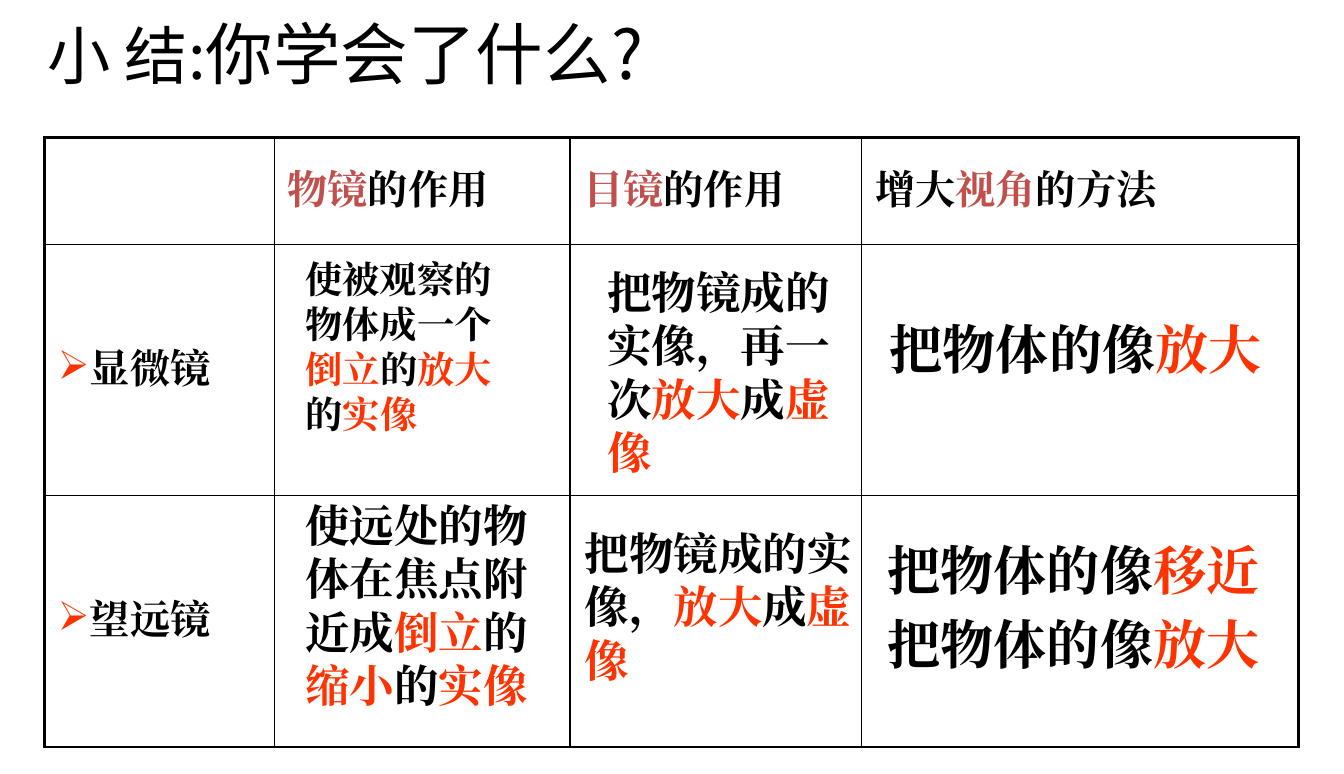
from dataclasses import dataclass
from lxml.etree import SubElement
from pptx import Presentation
from pptx.dml.color import RGBColor
from pptx.enum.text import MSO_ANCHOR
from pptx.oxml.ns import qn
from pptx.util import Inches, Pt

COLORS = {"ink": "000000", "rose": "C0504D", "red": "FF3300"}
SERIF = "Times New Roman"
SANS = "Noto Sans CJK SC"

Piece = tuple[str, str]
Line = list[Piece]


@dataclass
class Note:
    left: float
    top: float
    width: float
    height: float
    size: float
    before: int
    lines: list[Line]


HEADS: list[Line] = [
    [("物镜", "rose"), ("的作用", "ink")],
    [("目镜", "rose"), ("的作用", "ink")],
    [("增大", "ink"), ("视角", "rose"), ("的方法", "ink")],
]
TOOLS = ["显微镜", "望远镜"]
WIDTHS = [2.22, 2.86, 2.82, 4.22]
HEIGHTS = [1.03, 2.43, 2.43]

NOTES = [
    Note(2.82, 2.41, 2.38, 1.92, 26, 20, [[
        ("使被观察的物体成一个", "ink"), ("倒立", "red"), ("的", "ink"),
        ("放大", "red"), ("的", "ink"), ("实像", "red")]]),
    Note(5.74, 2.49, 2.49, 2.28, 31, 20, [[
        ("把物镜成的实像，再一次", "ink"), ("放大", "red"),
        ("成", "ink"), ("虚像", "red")]]),
    Note(8.47, 2.99, 4.01, 0.76, 37, 50, [[
        ("把物体的像", "ink"), ("放大", "red")]]),
    Note(2.82, 4.74, 2.71, 2.28, 31, 50, [[
        ("使远处的物体在焦点附近成", "ink"), ("倒立", "red"), ("的", "ink"),
        ("缩小", "red"), ("的", "ink"), ("实像", "red")]]),
    Note(5.52, 5.01, 2.92, 1.75, 31, 20, [[
        ("把物镜成的实像，", "ink"), ("放大", "red"),
        ("成", "ink"), ("虚像", "red")]]),
    Note(8.45, 5.12, 3.9, 1.51, 37, 20, [
        [("把物体的像", "ink"), ("移近", "red")],
        [("把物体的像", "ink"), ("放大", "red")]]),
]


def add_run(para, text: str, size: float, color: str,
            face: str = SERIF, bold: bool = True) -> None:
    run = para.add_run()
    run.text = text
    font = run.font
    font.size, font.bold, font.name = Pt(size), bold, face
    font.color.rgb = RGBColor.from_string(COLORS[color])
    SubElement(font._element, qn("a:ea"), typeface=face)


def fill_line(para, line: Line, size: float, before: int) -> None:
    props = para._p.get_or_add_pPr()
    space = SubElement(props, qn("a:spcBef"))
    SubElement(space, qn("a:spcPct"), val=str(before * 1000))
    for text, color in line:
        add_run(para, text, size, color)


def add_bullet(para) -> None:
    props = para._p.get_or_add_pPr()
    tint = SubElement(props, qn("a:buClr"))
    SubElement(tint, qn("a:srgbClr"), val=COLORS["red"])
    SubElement(props, qn("a:buChar"), char="➢")


def set_edges(cell, row: int, col: int) -> None:
    props = cell._tc.get_or_add_tcPr()
    outer = {"lnL": col == 0, "lnR": col == len(WIDTHS) - 1,
             "lnT": row == 0, "lnB": row == len(HEIGHTS) - 1}
    for side, thick in outer.items():
        edge = SubElement(props, qn(f"a:{side}"), w=str(Pt(2.25 if thick else 1)))
        paint = SubElement(edge, qn("a:solidFill"))
        SubElement(paint, qn("a:srgbClr"), val=COLORS["ink"])


def add_grid(slide) -> None:
    frame = slide.shapes.add_table(
        len(HEIGHTS), len(WIDTHS), Inches(0.43), Inches(1.33),
        Inches(sum(WIDTHS)), Inches(sum(HEIGHTS)))
    table = frame.table
    table.first_row = table.horz_banding = False
    for col, width in enumerate(WIDTHS):
        table.columns[col].width = Inches(width)
    for row, height in enumerate(HEIGHTS):
        table.rows[row].height = Inches(height)
        for col in range(len(WIDTHS)):
            cell = table.cell(row, col)
            cell.vertical_anchor = MSO_ANCHOR.MIDDLE
            cell.margin_left = cell.margin_right = Inches(0.13)
            cell.margin_top = cell.margin_bottom = Inches(0.05)
            set_edges(cell, row, col)
            cell.fill.background()
            para = cell.text_frame.paragraphs[0]
            if row == 0 and col > 0:
                fill_line(para, HEADS[col - 1], 28, 20)
            elif row > 0 and col == 0:
                fill_line(para, [(TOOLS[row - 1], "ink")], 28, 20)
                add_bullet(para)


def add_box(slide, left: float, top: float, width: float, height: float):
    box = slide.shapes.add_textbox(
        Inches(left), Inches(top), Inches(width), Inches(height))
    box.text_frame.word_wrap = True
    return box.text_frame


def add_title(slide) -> None:
    frame = add_box(slide, 0.36, 0.03, 9, 0.96)
    frame.vertical_anchor = MSO_ANCHOR.MIDDLE
    para = frame.paragraphs[0]
    add_run(para, "小 结:", 44, "ink", SANS, False)
    add_run(para, "你学会了什么?", 47, "ink", SANS, False)


def add_note(slide, note: Note) -> None:
    frame = add_box(slide, note.left, note.top, note.width, note.height)
    frame.margin_left = frame.margin_right = Inches(0.13)
    frame.margin_top = frame.margin_bottom = Inches(0.07)
    for spot, line in enumerate(note.lines):
        para = frame.add_paragraph() if spot else frame.paragraphs[0]
        fill_line(para, line, note.size, note.before)


def main() -> None:
    deck = Presentation()
    deck.slide_width, deck.slide_height = Inches(12.99), Inches(7.48)
    slide = deck.slides.add_slide(deck.slide_layouts[6])
    add_grid(slide)
    add_title(slide)
    for note in NOTES:
        add_note(slide, note)
    deck.save("out.pptx")


if __name__ == "__main__":
    main()
